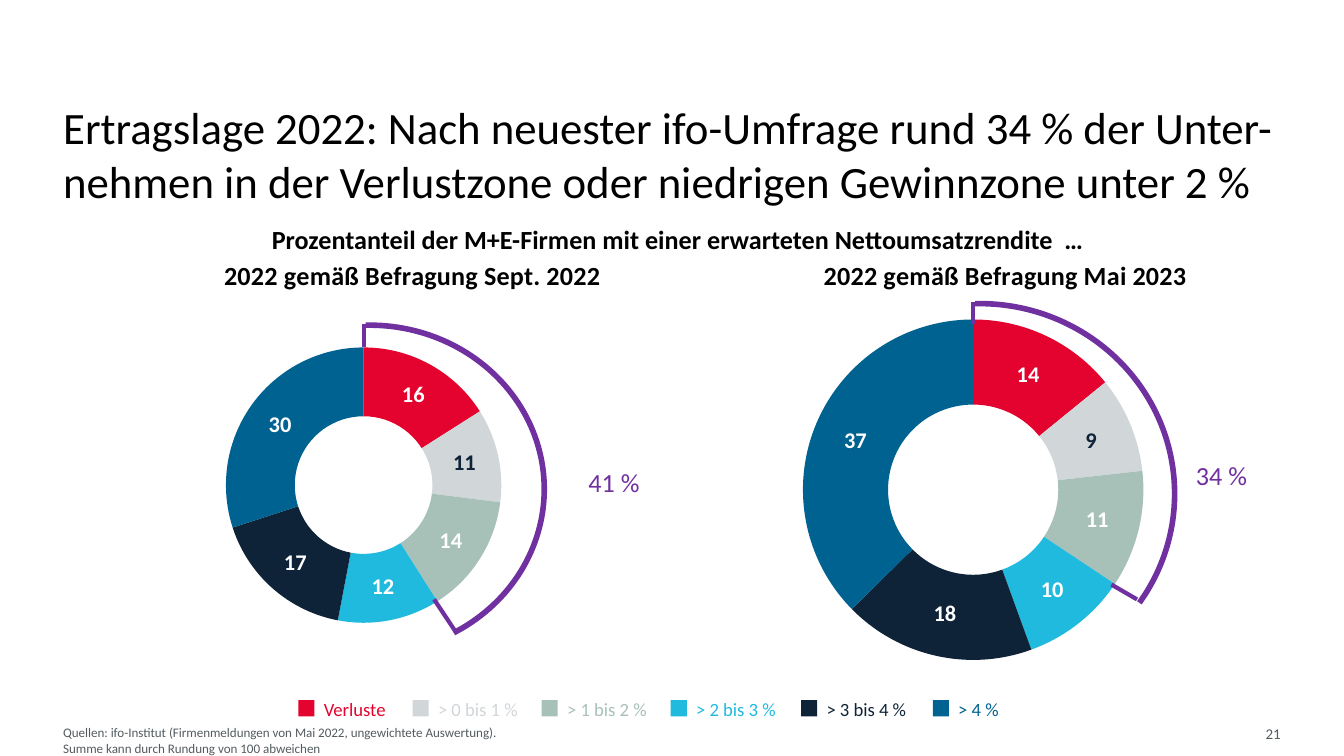
from lxml import etree
from pptx import Presentation
from pptx.chart.data import CategoryChartData
from pptx.dml.color import RGBColor
from pptx.enum.chart import XL_CHART_TYPE
from pptx.enum.shapes import MSO_CONNECTOR, MSO_SHAPE
from pptx.enum.text import MSO_ANCHOR, MSO_AUTO_SIZE, PP_ALIGN
from pptx.oxml.ns import qn
from pptx.util import Inches, Pt

DOUGHNUT = XL_CHART_TYPE.DOUGHNUT
STRAIGHT = MSO_CONNECTOR.STRAIGHT
RECT, ARC = MSO_SHAPE.RECTANGLE, MSO_SHAPE.ARC
TOP, MIDDLE = MSO_ANCHOR.TOP, MSO_ANCHOR.MIDDLE
LEFT, CENTER, RIGHT = PP_ALIGN.LEFT, PP_ALIGN.CENTER, PP_ALIGN.RIGHT
NO_AUTOFIT = MSO_AUTO_SIZE.NONE

FONT = "Calibri"
BLACK, WHITE, GREY, PURPLE, NAVY = "000000", "FFFFFF", "545C60", "7030A0", "0F2338"
CLASSES = [  # label, colour, offset of the legend entry
    ("Verluste", "E4032E", 0),
    ("> 0 bis 1 %", "D1D6D9", 0.85),
    ("> 1 bis 2 %", "A8C1B8", 1.81),
    ("> 2 bis 3 %", "20BADF", 2.77),
    ("> 3 bis 4 %", NAVY, 3.74),
    ("> 4 %", "006291", 4.72),
]


def rgb(color):
    return RGBColor.from_string(color)


def style_font(font, size, color, bold=False):
    font.name, font.size, font.bold = FONT, Pt(size), bold
    font.color.rgb = rgb(color)


def fill_text(s, lines, size, color, bold=False, align=LEFT, anchor=TOP, inset=True):
    tf = s.text_frame
    tf.word_wrap, tf.auto_size, tf.vertical_anchor = True, NO_AUTOFIT, anchor
    if not inset:
        tf.margin_left = tf.margin_right = tf.margin_top = tf.margin_bottom = 0
    for i, line in enumerate(lines):
        p = tf.add_paragraph() if i else tf.paragraphs[0]
        p.alignment = align
        r = p.add_run()
        r.text = line
        style_font(r.font, size, color, bold)


def add_text(shapes, box, lines, size, color, **kwargs):
    s = shapes.add_textbox(*map(Inches, box))
    fill_text(s, lines, size, color, **kwargs)


def add_title(slide, box, text):
    s = slide.shapes.title
    s.left, s.top, s.width, s.height = map(Inches, box)
    fill_text(s, [text], 24, BLACK, inset=False)


def set_layout(parent, index, **values):
    """Place a chart part by fractions of the chart area."""
    for old in parent.findall(qn("c:layout")):
        parent.remove(old)
    layout = etree.Element(qn("c:layout"))
    parent.insert(index, layout)
    manual = etree.SubElement(layout, qn("c:manualLayout"))
    for tag, value in values.items():
        etree.SubElement(manual, qn("c:" + tag)).set("val", str(value))


def add_doughnut(slide, box, title, title_at, plot, values):
    data = CategoryChartData(number_format="#,##0")
    data.categories = [str(i + 1) for i in range(len(values))]
    data.add_series("Series 1", values)
    chart = slide.shapes.add_chart(DOUGHNUT, *map(Inches, box), data).chart
    style_font(chart.font, 18, BLACK)
    chart.has_legend = False

    chart.has_title = True
    r = chart.chart_title.text_frame.paragraphs[0].add_run()
    r.text = title
    style_font(r.font, 14, BLACK, True)
    x, y = title_at
    set_layout(chart.chart_title._element, 1, xMode="edge", yMode="edge", x=x, y=y)
    x, y, w, h = plot
    set_layout(chart._chartSpace.chart.plotArea, 0, layoutTarget="inner",
               xMode="edge", yMode="edge", x=x, y=y, w=w, h=h)

    doughnut = chart.plots[0]
    doughnut.vary_by_categories = True
    doughnut._element.find(qn("c:holeSize")).set("val", "50")
    series = doughnut.series[0]
    labels = series.data_labels
    labels.show_value = True
    labels.show_percentage = False
    labels.show_legend_key = False
    style_font(labels.font, 12, WHITE, True)
    for i, (_, color, _) in enumerate(CLASSES):
        fill = series.points[i].format.fill
        fill.solid()
        fill.fore_color.rgb = rgb(color)
    style_font(series.points[1].data_label.font, 12, NAVY, True)


def add_bracket(slide, box, arc, sweep, ticks, label, label_at):
    """Arc with two end ticks and a total, placed relative to the chart box."""
    left, top = box[:2]
    x, y, w, h = arc
    s = slide.shapes.add_shape(ARC, *map(Inches, (left + x, top + y, w, h)))
    s.shadow.inherit = False
    s.adjustments[0], s.adjustments[1] = sweep
    s.fill.background()
    s.line.color.rgb = rgb(PURPLE)
    s.line.width = Pt(3)
    for x1, y1, x2, y2 in ticks:
        ends = (left + x1, top + y1, left + x2, top + y2)
        line = slide.shapes.add_connector(STRAIGHT, *map(Inches, ends))
        line.line.color.rgb = rgb(PURPLE)
        line.line.width = Pt(2.25)
        etree.SubElement(line._element.spPr, qn("a:effectLst"))
    x, y = label_at
    add_text(slide.shapes, (left + x, top + y, 0.82, 0.34), [label], 14, PURPLE)


def add_legend(slide, left, top):
    shapes = slide.shapes.add_group_shape().shapes
    for label, color, offset in CLASSES:
        x = left + offset
        s = shapes.add_shape(RECT, *map(Inches, (x, top + 0.02, 0.12, 0.12)))
        s.shadow.inherit = False
        s.fill.solid()
        s.fill.fore_color.rgb = rgb(color)
        s.line.fill.background()
        add_text(shapes, (x + 0.19, top, 0.64, 0.17), [label], 10, color,
                 anchor=MIDDLE, inset=False)


def main():
    prs = Presentation()
    prs.slide_width = Inches(10)
    prs.slide_height = prs.slide_width * 9 // 16
    slide = prs.slides.add_slide(prs.slide_layouts[5])
    add_title(slide, (0.47, 0.74, 9.06, 0.79),
              "Ertragslage 2022: Nach neuester ifo-Umfrage rund 34 % der Unter-"
              "nehmen in der Verlustzone oder niedrigen Gewinnzone unter 2 %")

    sept, mai = (0.43, 1.73, 4.45, 3.64), (5.07, 1.73, 4.45, 3.64)
    add_doughnut(slide, sept, "2022 gemäß Befragung Sept. 2022", (0.27, 0.04),
                 (0.281, 0.235, 0.461, 0.563), (16, 11, 14, 12, 17, 30))
    add_bracket(slide, sept, (1.02, 0.69, 2.6, 2.44), (161.18, 35.77),
                [(2.28, 0.85, 2.28, 0.68), (2.96, 2.97, 2.8, 2.73)],
                "41 %", (3.85, 1.69))
    add_doughnut(slide, mai, "2022 gemäß Befragung Mai 2023", (0.23, 0.04),
                 (0.203, 0.178, 0.57, 0.696), (14, 9, 11, 10, 18, 37))
    add_bracket(slide, mai, (0.77, 0.53, 2.9, 2.83), (161.18, 20.6),
                [(2.17, 0.68, 2.17, 0.52), (3.39, 2.73, 3.2, 2.62)],
                "34 %", (3.73, 1.64))

    add_text(slide.shapes, (1.46, 1.61, 7.17, 0.34),
             ["Prozentanteil der M+E-Firmen mit einer erwarteten Nettoumsatzrendite  …"],
             14, BLACK, bold=True, align=CENTER)
    add_legend(slide, 2.22, 5.19)
    add_text(slide.shapes, (0.47, 5.39, 9.03, 0.25),
             ["Quellen: ifo-Institut (Firmenmeldungen von Mai 2022, ungewichtete Auswertung).",
              "Summe kann durch Rundung von 100 abweichen"], 7, GREY, inset=False)
    add_text(slide.shapes, (8.98, 5.39, 0.55, 0.24), ["21"], 8, GREY,
             align=RIGHT, inset=False)
    prs.save("out.pptx")


if __name__ == "__main__":
    main()
